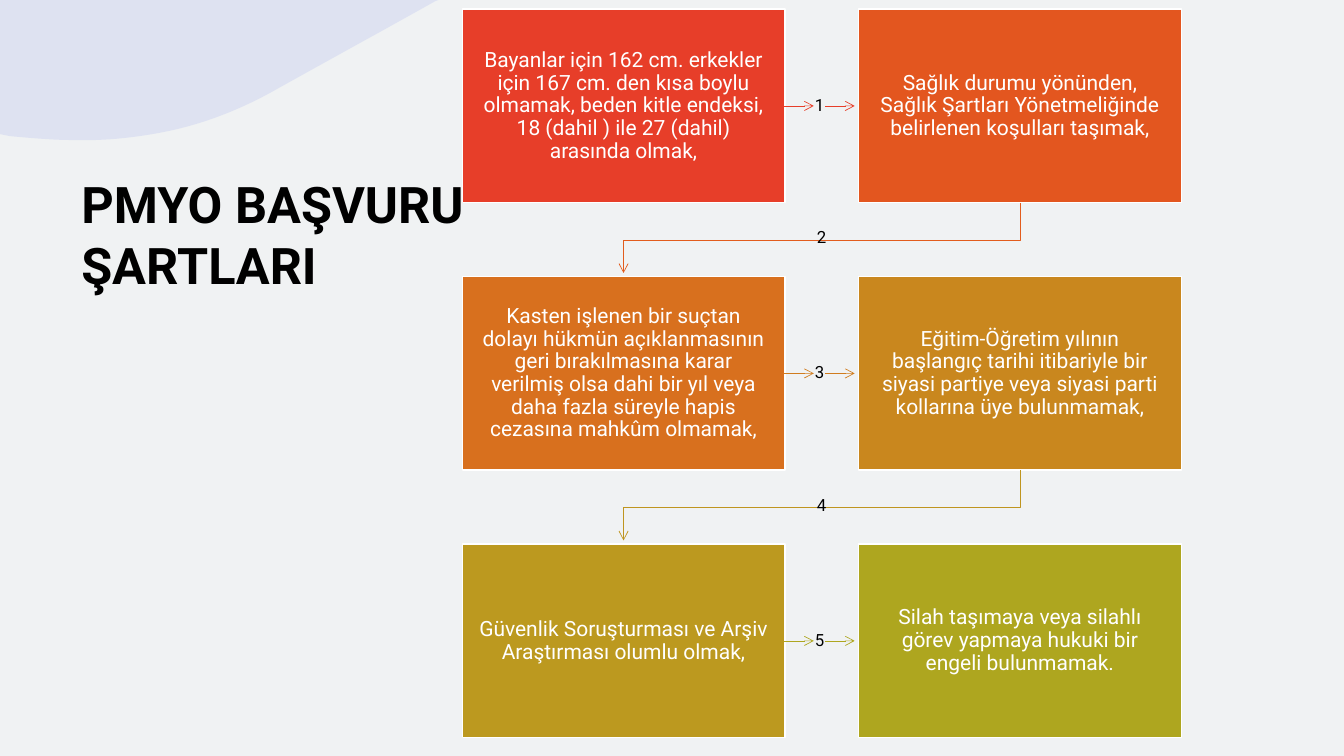
"""Build the PMYO application requirements slide."""
from lxml.etree import SubElement
from pptx import Presentation
from pptx.dml.color import RGBColor as RGB
from pptx.enum.shapes import MSO_SHAPE as SHAPE
from pptx.enum.text import MSO_ANCHOR as ANCHOR, PP_ALIGN as ALIGN
from pptx.oxml.ns import qn
from pptx.util import Cm, Pt

BACKGROUND = RGB(0xF0, 0xF2, 0xF3)
WAVE = RGB(0xAA, 0xB3, 0xEF)
BLACK = RGB(0x00, 0x00, 0x00)
WHITE = RGB(0xFF, 0xFF, 0xFF)
RED = RGB(0xE7, 0x3E, 0x29)
VERMILION = RGB(0xE3, 0x56, 0x1F)
ORANGE = RGB(0xD8, 0x70, 0x1E)
OCHRE = RGB(0xC9, 0x87, 0x1E)
GOLD = RGB(0xBC, 0x99, 0x1F)
OLIVE = RGB(0xAE, 0xA6, 0x1F)
ARROW_COLORS = [RED, RGB(0xE2, 0x5C, 0x1D), RGB(0xD0, 0x7C, 0x1E),
                RGB(0xBF, 0x95, 0x1F), OLIVE]

CONDITIONS = [
    ("Bayanlar için 162 cm. erkekler için 167 cm. den kısa boylu olmamak, "
     "beden kitle endeksi, 18 (dahil ) ile 27 (dahil) arasında olmak,", RED),
    ("Sağlık durumu yönünden, Sağlık Şartları Yönetmeliğinde belirlenen "
     "koşulları taşımak,", VERMILION),
    ("Kasten işlenen bir suçtan dolayı hükmün açıklanmasının geri "
     "bırakılmasına karar verilmiş olsa dahi bir yıl veya daha fazla "
     "süreyle hapis cezasına mahkûm olmamak,", ORANGE),
    ("Eğitim-Öğretim yılının başlangıç tarihi itibariyle bir siyasi partiye "
     "veya siyasi parti kollarına üye bulunmamak,", OCHRE),
    ("Güvenlik Soruşturması ve Arşiv Araştırması olumlu olmak,", GOLD),
    ("Silah taşımaya veya silahlı görev yapmaya hukuki bir engeli "
     "bulunmamak.", OLIVE),
]
LEFT, TOP, BOX_W, BOX_H = 11.65, 0.23, 8.13, 4.88
STEP_X, STEP_Y = 9.99, 6.74


def write(sp, text, size, color, inset_x, inset_y, anchor=ANCHOR.MIDDLE,
          align=ALIGN.CENTER, spacing=0.9, bold=False):
    tf = sp.text_frame
    frame_format = {"word_wrap": True, "vertical_anchor": anchor,
                    "margin_left": Cm(inset_x), "margin_right": Cm(inset_x),
                    "margin_top": Cm(inset_y), "margin_bottom": Cm(inset_y)}
    for name, value in frame_format.items():
        setattr(tf, name, value)
    p = tf.paragraphs[0]
    p.alignment, p.line_spacing = align, spacing
    r = p.add_run()
    r.text = text
    for name, value in {"name": "Roboto", "size": Pt(size), "bold": bold}.items():
        setattr(r.font, name, value)
    r.font.color.rgb = color


def draw_outline(strokes, close):
    strokes = [[(Cm(x), Cm(y)) for x, y in stroke] for stroke in strokes]
    builder = s.shapes.build_freeform(*strokes[0][0])
    builder.add_line_segments(strokes[0][1:], close=close)
    for stroke in strokes[1:]:
        builder.move_to(*stroke[0])
        builder.add_line_segments(stroke[1:], close=close)
    sp = builder.convert_to_shape()
    sp.shadow.inherit = False
    return sp


prs = Presentation()
prs.slide_width, prs.slide_height = Cm(33.87), Cm(19.05)
s = prs.slides.add_slide(prs.slide_layouts[6])
s.background.fill.solid()
s.background.fill.fore_color.rgb = BACKGROUND

title = s.shapes.add_textbox(Cm(1.8), Cm(4.24), Cm(12.29), Cm(12.62))
write(title, "PMYO BAŞVURU ŞARTLARI", 36, BLACK, 0.25, 0.13,
      ANCHOR.TOP, ALIGN.LEFT, 1.0, True)

wave_points = [(0, 3.38), (0, 0), (11.05, 0), (10.97, 0.03)]
curves = [
    [(10.97, 0.03), (9.58, 0.81), (8.13, 1.6), (6.81, 2.34)],
    [(6.81, 2.34), (5.89, 2.84), (4.95, 3.18), (4.01, 3.35)],
    [(4.01, 3.35), (3.3, 3.48), (2.59, 3.55), (1.88, 3.53)],
    [(1.88, 3.53), (1.35, 3.53), (0.79, 3.48), (0.25, 3.43)],
]
for curve in curves:
    for i in range(1, 13):
        t = i / 12
        weights = [(1 - t) ** 3, 3 * t * (1 - t) ** 2, 3 * t ** 2 * (1 - t), t ** 3]
        wave_points.append(tuple(sum(w * point[axis] for w, point in zip(weights, curve))
                                 for axis in (0, 1)))
wave = draw_outline([wave_points], True)
wave.fill.solid()
wave.fill.fore_color.rgb = WAVE
SubElement(wave.fill._xPr.find(qn("a:solidFill"))[0], qn("a:alpha"), val="25000")
wave.line.fill.background()

for i, (text, color) in enumerate(CONDITIONS):
    row, col = divmod(i, 2)
    x, y = LEFT + col * STEP_X, TOP + row * STEP_Y
    box = s.shapes.add_shape(SHAPE.RECTANGLE, Cm(x), Cm(y), Cm(BOX_W), Cm(BOX_H))
    box.shadow.inherit = False
    box.fill.solid()
    box.fill.fore_color.rgb = color
    box.line.color.rgb = WHITE
    box.line.width = Pt(1)
    write(box, text, 15, WHITE, 0.4, 0.4)

for i, color in enumerate(ARROW_COLORS):
    row, is_turn = divmod(i, 2)
    y = TOP + row * STEP_Y
    if is_turn:
        target_x = LEFT + BOX_W / 2
        source_x, bend_y = target_x + STEP_X, y + 5.82
        strokes = [[(source_x, y + BOX_H), (source_x, bend_y),
                    (target_x, bend_y), (target_x, y + 6.65)]]
        label_x, label_y, label_w = 20.45, bend_y - 0.28, 0.51
    else:
        middle_y = y + BOX_H / 2
        strokes = [[(x, middle_y), (x + 0.74, middle_y)] for x in (19.77, 20.8)]
        label_x, label_y, label_w = 20.49, middle_y - 0.23, 0.33
    arrow = draw_outline(strokes, False)
    arrow.fill.background()
    arrow.line.color.rgb = color
    arrow.line.width = Pt(0.5)
    SubElement(arrow.line._get_or_add_ln(), qn("a:tailEnd"), type="arrow")
    label = s.shapes.add_textbox(Cm(label_x), Cm(label_y), Cm(label_w), Cm(0.46))
    write(label, str(i + 1), 12, BLACK, 0.02, 0)

prs.save("out.pptx")
